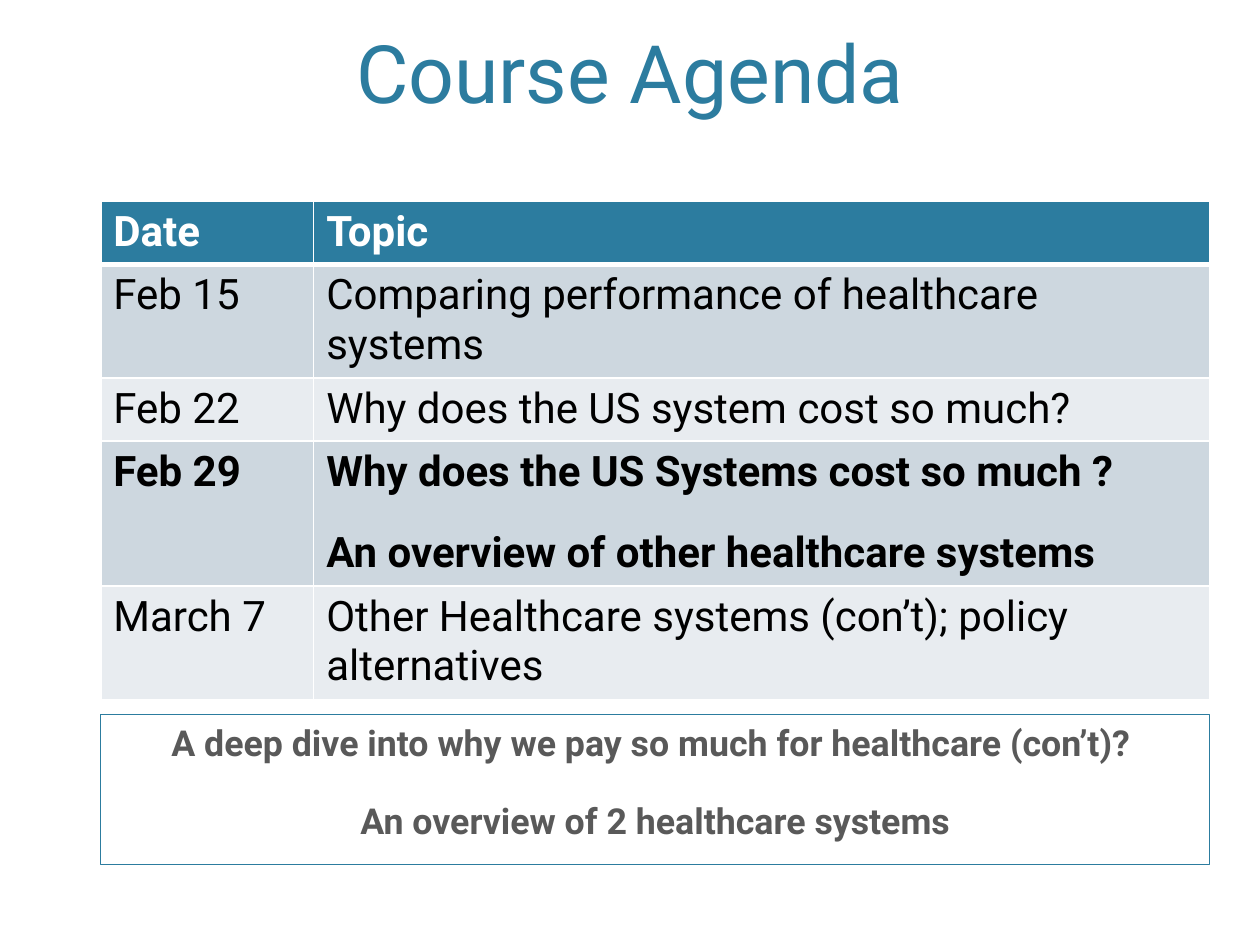
from dataclasses import dataclass

from lxml.etree import SubElement
from pptx import Presentation
from pptx.dml.color import RGBColor
from pptx.enum.shapes import MSO_SHAPE as Preset
from pptx.enum.text import MSO_ANCHOR as Anchor, PP_ALIGN as Align
from pptx.oxml.ns import qn
from pptx.util import Inches, Pt

FONT = "Roboto"
TEAL, GRAY, BLACK, WHITE = "2C7C9F", "595959", "000000", "FFFFFF"
BANDS = ("CDD7DF", "E8ECF0")
LEFT, WIDTH = 0.8, 8.8
COLUMNS = (1.69, 7.11)
SPACE_AFTER = (12, 18)


@dataclass(frozen=True)
class AgendaRow:
    """One row of the agenda table."""
    date: str
    topic: str
    height: float
    bold: bool = False


ROWS = (
    AgendaRow("Date", "Topic", 0.48, True),
    AgendaRow("Feb 15", "Comparing performance of healthcare systems", 0.88),
    AgendaRow("Feb 22", "Why does the US system cost so much?", 0.49),
    AgendaRow("Feb 29", "Why does the US Systems cost so much ?\n"
              "An overview of other healthcare systems", 1.14, True),
    AgendaRow("March 7", "Other Healthcare systems (con’t); policy alternatives", 0.88),
)


def color(value: str) -> RGBColor:
    """Turn a hex string into a colour."""
    return RGBColor.from_string(value)


def write(frame, text: str, size: float, ink: str, bold: bool = False,
          align: Align = Align.LEFT, before: float = 0, after: float = 0) -> None:
    """Put text in a frame and format every paragraph alike."""
    frame.text = text
    frame.word_wrap = True
    for paragraph in frame.paragraphs:
        paragraph.alignment = align
        paragraph.space_before, paragraph.space_after = Pt(before), Pt(after)
        for run in paragraph.runs:
            font = run.font
            font.name, font.size, font.bold = FONT, Pt(size), bold
            font.color.rgb = color(ink)


def set_borders(cell, bottom: float) -> None:
    """Draw white borders with the given bottom width in points."""
    properties = cell._tc.get_or_add_tcPr()
    widths = {"lnL": 1, "lnR": 1, "lnT": 1, "lnB": bottom}
    for index, (side, width) in enumerate(widths.items()):
        line = SubElement(properties, qn(f"a:{side}"), w=str(Pt(width)))
        fill = SubElement(line, qn("a:solidFill"))
        SubElement(fill, qn("a:srgbClr"), val=WHITE)
        properties.insert(index, line)


def add_title(slide) -> None:
    """Add the centred heading."""
    shape = slide.shapes.add_textbox(Inches(0.6), Inches(0.12), Inches(8.8), Inches(0.88))
    write(shape.text_frame, "Course Agenda", 46, TEAL, align=Align.CENTER)
    shape.text_frame.vertical_anchor = Anchor.BOTTOM


def add_agenda(slide) -> None:
    """Add the table of dates and topics."""
    height = sum(row.height for row in ROWS)
    table = slide.shapes.add_table(len(ROWS), len(COLUMNS), Inches(LEFT), Inches(1.6),
                                   Inches(WIDTH), Inches(height)).table
    for column, width in zip(table.columns, COLUMNS):
        column.width = Inches(width)
    for index, row in enumerate(ROWS):
        table.rows[index].height = Inches(row.height)
        header = index == 0
        for position, text in enumerate((row.date, row.topic)):
            cell = table.cell(index, position)
            cell.fill.solid()
            cell.fill.fore_color.rgb = color(TEAL if header else BANDS[(index - 1) % 2])
            set_borders(cell, 3 if header else 1)
            write(cell.text_frame, text, 24, WHITE if header else BLACK,
                  row.bold, after=SPACE_AFTER[position])


def add_summary(slide) -> None:
    """Add the outlined box under the table."""
    shape = slide.shapes.add_shape(Preset.RECTANGLE, Inches(LEFT), Inches(5.67),
                                   Inches(WIDTH), Inches(1.19))
    shape.shadow.inherit = False
    shape.fill.background()
    shape.line.color.rgb = color(TEAL)
    shape.line.width = Pt(0.75)
    shape.text_frame.vertical_anchor = Anchor.TOP
    write(shape.text_frame, "A deep dive into why we pay so much for healthcare (con’t)? \n"
          "An overview of 2 healthcare systems", 20.4, GRAY, True, Align.CENTER, before=20)


def main() -> None:
    """Build and save the slide."""
    presentation = Presentation()
    presentation.slide_width, presentation.slide_height = Inches(10), Inches(7.5)
    slide = presentation.slides.add_slide(presentation.slide_layouts[6])
    add_title(slide)
    add_agenda(slide)
    add_summary(slide)
    presentation.save("out.pptx")


if __name__ == "__main__":
    main()
